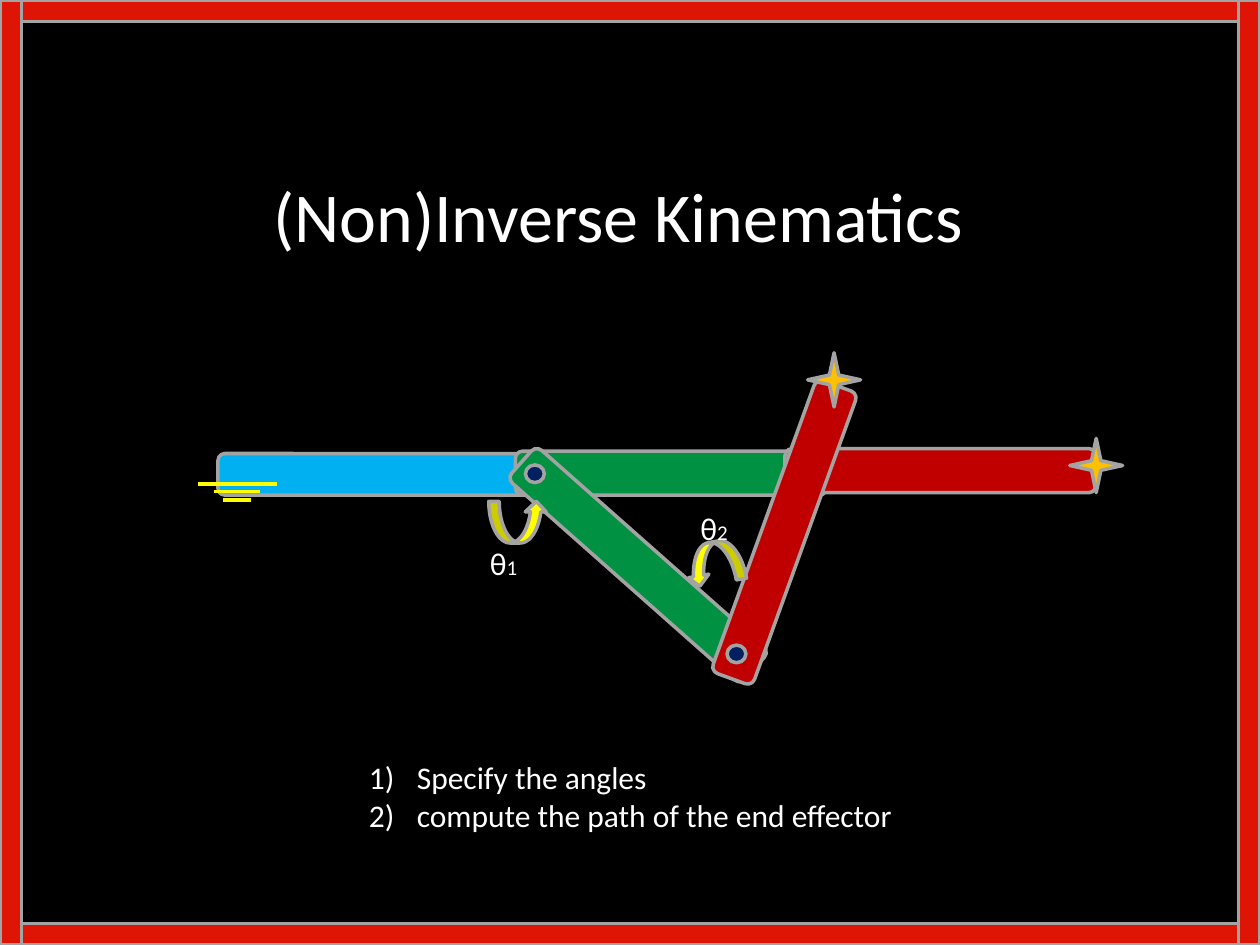
from lxml import etree
from pptx import Presentation
from pptx import util as u
from pptx.dml.color import RGBColor
from pptx.enum import shapes, text
from pptx.oxml.ns import qn

COLORS = {
    "background": "000000", "frame": "DE1404", "outline": "A3A3A3",
    "text": "FFFFFF", "base": "00B0F0", "upper": "009242", "lower": "C00000",
    "joint": "002060", "turn": "FFFF00", "effector": "FFC000",
}
WIDTH, HEIGHT, BORDER = 10, 7.5, 0.17
LINK_SIZE = (0.35, 2.47)
JOINT_SIZE = (0.15, 0.14)
TURN_SIZE = (0.46, 0.33)
STAR_SIZE = (0.42, 0.43)
SHAPE = shapes.MSO_SHAPE


def color(name):
    return RGBColor.from_string(COLORS[name])


class SlideBuilder:
    """Holds the drawing style and the current slide."""
    font = "Calibri"
    line_width = u.Pt(2)

    def __init__(self, page):
        self.page = page
        page.background.fill.solid()
        page.background.fill.fore_color.rgb = color("background")

    def shape(self, kind, position, size, fill, rotation=0):
        item = self.page.shapes.add_shape(
            kind, *(u.Inches(value) for value in (*position, *size)))
        item.shadow.inherit = False
        item.rotation = rotation
        item.fill.solid()
        item.fill.fore_color.rgb = color(fill)
        item.line.color.rgb = color("outline")
        item.line.width = self.line_width

    def line(self, left, right, y):
        item = self.page.shapes.add_connector(
            shapes.MSO_CONNECTOR.STRAIGHT,
            *(u.Inches(value) for value in (left, y, right, y)))
        item.line.color.rgb = color("turn")
        item.line.width = self.line_width
        etree.SubElement(item.element.spPr, qn("a:effectLst"))

    def text(self, position, size, paragraphs, numbered=False):
        """Each paragraph is a list of (wording, point size) spans."""
        box = self.page.shapes.add_textbox(
            *(u.Inches(value) for value in (*position, *size)))
        frame = box.text_frame
        frame.word_wrap = False
        frame.auto_size = text.MSO_AUTO_SIZE.SHAPE_TO_FIT_TEXT
        for index, spans in enumerate(paragraphs):
            para = frame.add_paragraph() if index else frame.paragraphs[0]
            if numbered:
                self.number(para)
            for wording, points in spans:
                span = para.add_run()
                span.text = wording
                style = {"name": self.font, "size": u.Pt(points)}
                for key, value in style.items():
                    setattr(span.font, key, value)
                span.font.color.rgb = color("text")

    def number(self, para):
        properties = para._p.get_or_add_pPr()
        indent = u.Inches(0.38)
        properties.set("marL", str(indent))
        properties.set("indent", str(-indent))
        etree.SubElement(properties, qn("a:buFont"), typeface="+mj-lt")
        etree.SubElement(properties, qn("a:buAutoNum"), type="arabicParenR")


def main():
    deck = Presentation()
    deck.slide_width, deck.slide_height = u.Inches(WIDTH), u.Inches(HEIGHT)
    slide = SlideBuilder(deck.slides.add_slide(deck.slide_layouts[6]))

    # Red frame around the slide
    for left in (0, WIDTH - BORDER):
        slide.shape(SHAPE.RECTANGLE, (left, 0), (BORDER, HEIGHT), "frame")
    for top in (0, HEIGHT - BORDER):
        slide.shape(SHAPE.RECTANGLE, (BORDER, top),
                    (WIDTH - 2 * BORDER, BORDER), "frame")

    # Title
    slide.text((2.07, 1.32), (5.86, 0.77), [[("(Non)Inverse Kinematics", 40)]])

    # Fixed base, then the stretched arm and the bent arm
    slide.shape(SHAPE.ROUNDED_RECTANGLE, (1.73, 3.6), (2.68, 0.33), "base")
    arms = [
        [((5.15, 2.52), 270, "upper"), ((7.29, 2.5), 270, "lower")],
        [((4.89, 3.25), 311.5, "upper"), ((6.05, 2.99), 199.9, "lower")],
    ]
    elbows = [(6.35, 3.66), (5.77, 5.12)]
    for links, elbow in zip(arms, elbows):
        for position, angle, fill in links:
            slide.shape(SHAPE.ROUNDED_RECTANGLE, position, LINK_SIZE, fill, angle)
        slide.shape(SHAPE.OVAL, elbow, JOINT_SIZE, "joint")

    # Rotation arrows and shoulder joint
    for position, angle in [((3.88, 3.98), 0), ((5.44, 4.3), 170.1)]:
        slide.shape(SHAPE.CURVED_UP_ARROW, position, TURN_SIZE, "turn", angle)
    slide.shape(SHAPE.OVAL, (4.17, 3.69), JOINT_SIZE, "joint")

    # Angle labels
    for position, index in [((3.79, 4.27), "1"), ((5.46, 3.99), "2")]:
        slide.text(position, (0.42, 0.4), [[("θ", 18), (index, 12)]])

    # End effectors
    for position in [(8.49, 3.48), (6.41, 2.8)]:
        slide.shape(SHAPE.STAR_4_POINT, position, STAR_SIZE, "effector")

    # Numbered steps
    steps = ["Specify the angles", "compute the path of the end effector"]
    slide.text((2.83, 5.97), (4.41, 0.71), [[(step, 18)] for step in steps],
               numbered=True)

    # Ground symbol
    for left, right, y in [(1.57, 2.2, 3.84), (1.7, 2.06, 3.9), (1.77, 1.99, 3.97)]:
        slide.line(left, right, y)

    deck.save("out.pptx")


if __name__ == "__main__":
    main()
